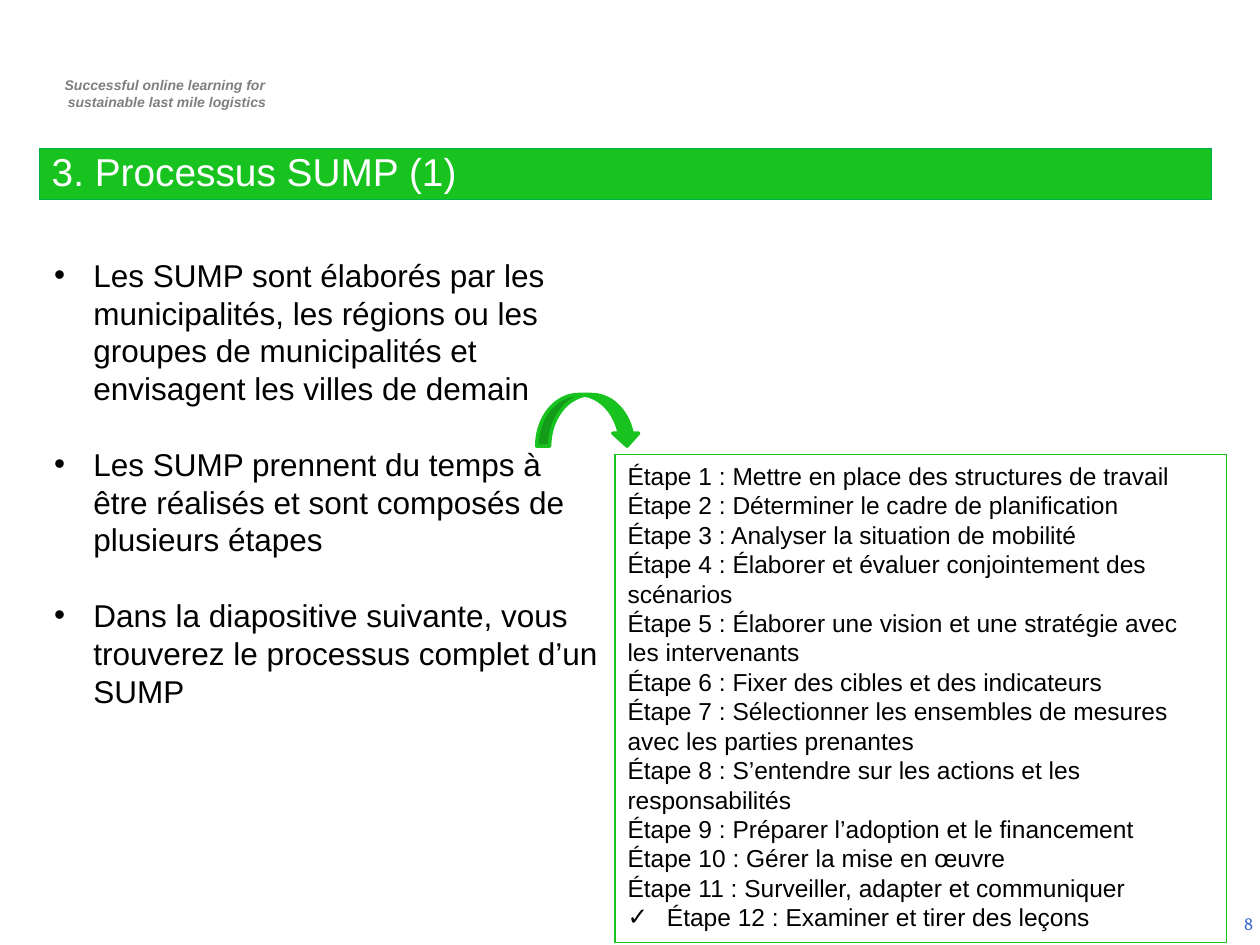
from dataclasses import dataclass

from lxml.etree import SubElement
from pptx import Presentation
from pptx.dml.color import RGBColor
from pptx.enum.shapes import MSO_SHAPE
from pptx.enum.text import MSO_ANCHOR, PP_ALIGN
from pptx.oxml.ns import qn
from pptx.util import Pt


@dataclass(frozen=True)
class Theme:
    green: str = "18C320"
    edge: str = "00B050"
    black: str = "000000"
    white: str = "FFFFFF"
    grey: str = "7F7F7F"
    blue: str = "3366CC"
    font: str = "Arial"
    number_font: str = "Cambria"
    header_size: float = 8
    number_size: float = 10
    steps_size: float = 14
    body_size: float = 18
    title_size: float = 22.2


@dataclass(frozen=True)
class Area:
    left: float
    top: float
    width: float
    height: float

    def lengths(self) -> tuple:
        return Pt(self.left), Pt(self.top), Pt(self.width), Pt(self.height)


THEME = Theme()
HANGING = 22.5

HEADER = ["Successful online learning for ", "sustainable last mile logistics"]
POINTS = [
    "Les SUMP sont élaborés par les municipalités, les régions ou les groupes "
    "de municipalités et envisagent les villes de demain",
    "Les SUMP prennent du temps à être réalisés et sont composés de plusieurs étapes",
    "Dans la diapositive suivante, vous trouverez le processus complet d’un SUMP",
]
STEPS = [
    "Mettre en place des structures de travail",
    "Déterminer le cadre de planification",
    "Analyser la situation de mobilité",
    "Élaborer et évaluer conjointement des scénarios",
    "Élaborer une vision et une stratégie avec les intervenants",
    "Fixer des cibles et des indicateurs",
    "Sélectionner les ensembles de mesures avec les parties prenantes",
    "S’entendre sur les actions et les responsabilités",
    "Préparer l’adoption et le financement",
    "Gérer la mise en œuvre",
    "Surveiller, adapter et communiquer",
    "Examiner et tirer des leçons",
]


def add_text_box(page, area: Area, anchor=MSO_ANCHOR.TOP):
    box = page.shapes.add_textbox(*area.lengths())
    box.text_frame.word_wrap = True
    box.text_frame.vertical_anchor = anchor
    return box


def add_outlined(page, kind, area: Area, fill: str | None, line: str,
                 line_width: float, anchor=MSO_ANCHOR.TOP):
    box = page.shapes.add_shape(kind, *area.lengths())
    box.shadow.inherit = False
    if fill:
        box.fill.solid()
        box.fill.fore_color.rgb = RGBColor.from_string(fill)
    else:
        box.fill.background()
    box.line.color.rgb = RGBColor.from_string(line)
    box.line.width = Pt(line_width)
    box.text_frame.word_wrap = True
    box.text_frame.vertical_anchor = anchor
    return box


def write(box, text: str, *, size: float, color: str = THEME.black,
          font: str = THEME.font, bold: bool = False, italic: bool = False,
          align=PP_ALIGN.LEFT, margin: float = 0, indent: float = 0,
          bullet: str = "", gap: float = 0, spacing: float | None = None) -> None:
    """Add one paragraph, with the gap before it unless it is the first."""
    frame = box.text_frame
    first = not frame.paragraphs[0].runs
    para = frame.paragraphs[0] if first else frame.add_paragraph()
    para.alignment = align
    para.space_before = Pt(0 if first else gap)
    if spacing:
        para.line_spacing = spacing
    properties = para._p.get_or_add_pPr()
    properties.set("marL", str(Pt(margin)))
    properties.set("indent", str(Pt(indent)))
    if bullet:
        bullet_color = SubElement(properties, qn("a:buClr"))
        SubElement(bullet_color, qn("a:srgbClr")).set("val", THEME.black)
        SubElement(properties, qn("a:buFont")).set("typeface", THEME.font)
        SubElement(properties, qn("a:buChar")).set("char", bullet)
    span = para.add_run()
    span.text = text
    span.font.name = font
    span.font.size = Pt(size)
    span.font.bold = bold
    span.font.italic = italic
    span.font.color.rgb = RGBColor.from_string(color)


def main() -> None:
    deck = Presentation()
    deck.slide_width, deck.slide_height = Pt(720), Pt(540)
    page = deck.slides.add_slide(deck.slide_layouts[6])

    header = add_text_box(page, Area(21, 40.2, 146, 26.6))
    for line in HEADER:
        write(header, line, size=THEME.header_size, color=THEME.grey, bold=True,
              italic=True, align=PP_ALIGN.CENTER, margin=2.9)

    number = add_text_box(page, Area(555, 513.4, 168, 28.8), MSO_ANCHOR.MIDDLE)
    write(number, "8", size=THEME.number_size, color=THEME.blue,
          font=THEME.number_font, align=PP_ALIGN.RIGHT)

    title = add_outlined(page, MSO_SHAPE.RECTANGLE, Area(22.5, 84.8, 670, 29.4),
                         THEME.green, THEME.edge, 0.75, MSO_ANCHOR.BOTTOM)
    write(title, "3. Processus SUMP (1)", size=THEME.title_size, color=THEME.white,
          margin=58.3, indent=-58.3, spacing=0.8)

    points = add_text_box(page, Area(23.8, 142.6, 327.8, 269.3))
    for point in POINTS:
        write(points, point, size=THEME.body_size, margin=HANGING, indent=-HANGING,
              bullet="•", gap=1.2 * THEME.body_size)

    steps = add_outlined(page, MSO_SHAPE.RECTANGLE, Area(351.5, 259.9, 349.2, 278.6),
                         None, THEME.green, 0.75)
    for position, step in enumerate(STEPS, 1):
        last = position == len(STEPS)
        write(steps, f"Étape {position} : {step}", size=THEME.steps_size,
              margin=HANGING if last else 0, indent=-HANGING if last else 0,
              bullet="✓" if last else "")

    add_outlined(page, MSO_SHAPE.CURVED_DOWN_ARROW, Area(306.7, 225.4, 59, 29.5),
                 THEME.green, THEME.green, 2)
    deck.save("out.pptx")


if __name__ == "__main__":
    main()
